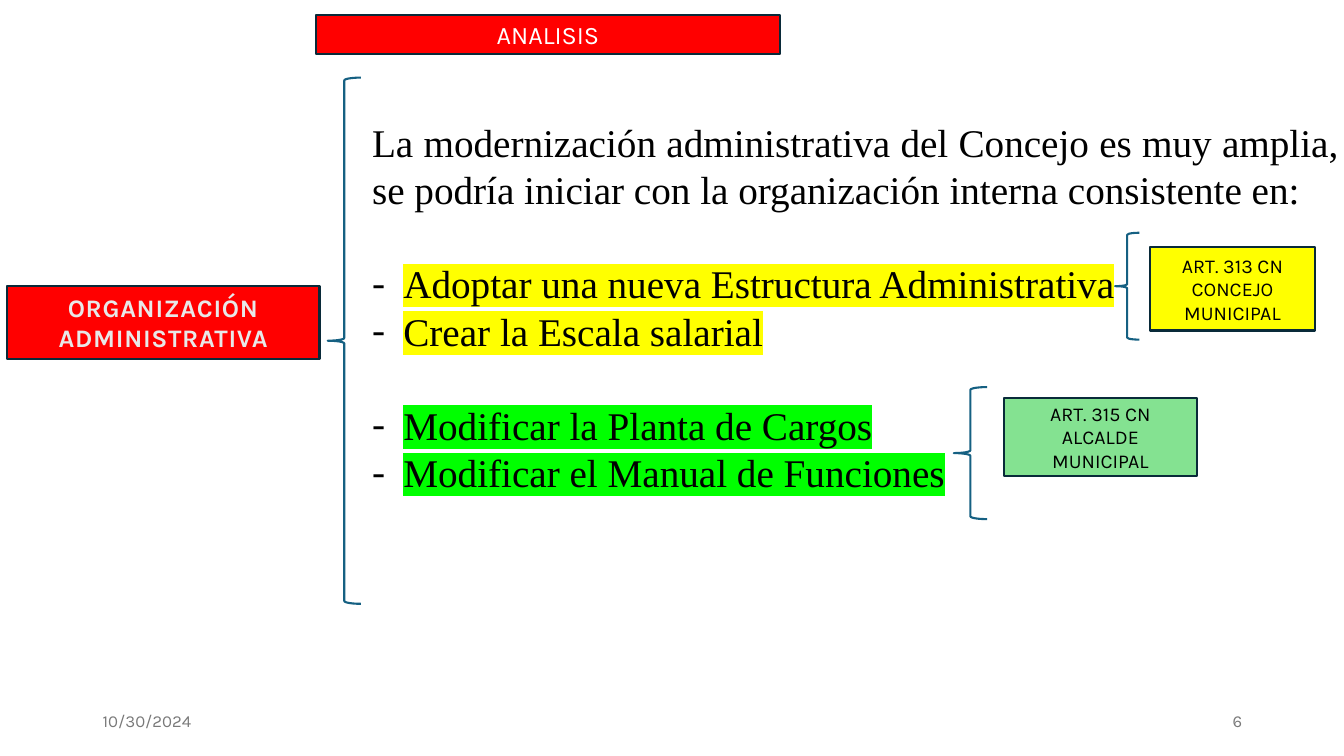
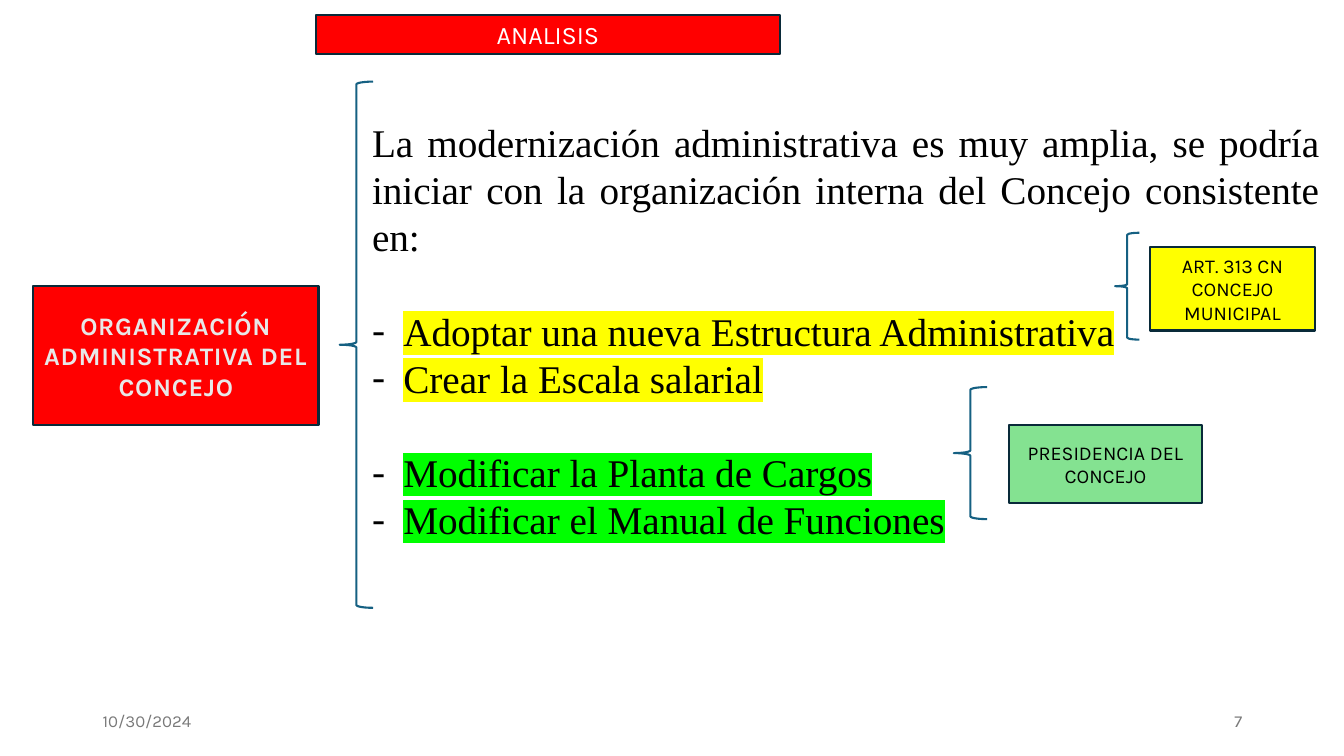
from lxml.etree import SubElement
from pptx import Presentation
from pptx.dml.color import RGBColor
from pptx.enum.shapes import MSO_SHAPE
from pptx.enum.text import MSO_ANCHOR, MSO_AUTO_SIZE, PP_ALIGN
from pptx.oxml.ns import qn
from pptx.util import Inches, Pt

RED = RGBColor(0xFF, 0x00, 0x00)
YELLOW = RGBColor(0xFF, 0xFF, 0x00)
LIME = RGBColor(0x00, 0xFF, 0x00)
MINT = RGBColor(0x84, 0xE2, 0x91)
NAVY = RGBColor(0x09, 0x2A, 0x39)
BLUE = RGBColor(0x15, 0x60, 0x82)
BLACK = RGBColor(0x00, 0x00, 0x00)
WHITE = RGBColor(0xFF, 0xFF, 0xFF)
PALE = RGBColor(0xE8, 0xE8, 0xE8)
GRAY = RGBColor(0x79, 0x79, 0x79)
SANS, SERIF = "Karla", "Times New Roman"
LINE_PITCH = Pt(33.7)
HANGING = Inches(0.31)

TITLE, TITLE_AT = "ANALISIS", (3.13, 0.15, 4.61, 0.39)
DATE, DATE_AT, NUMBER_AT = "10/30/2024", (0.92, 6.95, 3, 0.4), (9.42, 6.95, 3, 0.4)
GROUPS = [
    (YELLOW, ["Adoptar una nueva Estructura Administrativa", "Crear la Escala salarial"]),
    (LIME, ["Modificar la Planta de Cargos", "Modificar el Manual de Funciones"]),
]
GROUP_BRACES = [(11.06, 2.31, 0.24, 1.06), (9.46, 3.84, 0.33, 1.31)]
COUNCIL, COUNCIL_AT = "ART. 313 CN\nCONCEJO MUNICIPAL", (11.41, 2.45, 1.63, 0.83)

SLIDES = [
    {
        "number": 6,
        "topic": ("ORGANIZACIÓN ADMINISTRATIVA", (0.07, 2.84, 3.1, 0.72)),
        "intro": "La modernización administrativa del Concejo es muy amplia, "
                 "se podría iniciar con la organización interna consistente en:",
        "body_at": (3.59, 1.12, 9.79, 4.17),
        "main_brace": (3.25, 0.77, 0.33, 5.22),
        "authority": ("ART. 315 CN\nALCALDE MUNICIPAL", (9.96, 3.95, 1.91, 0.77)),
    },
    {
        "number": 7,
        "topic": ("ORGANIZACIÓN ADMINISTRATIVA DEL CONCEJO", (0.33, 2.84, 2.83, 1.38)),
        "intro": "La modernización administrativa es muy amplia, se podría "
                 "iniciar con la organización interna del Concejo consistente en:",
        "body_at": (3.59, 1.12, 9.6, 4.64),
        "main_brace": (3.37, 0.81, 0.33, 5.22),
        "authority": ("PRESIDENCIA DEL CONCEJO", (10.01, 4.22, 1.91, 0.77)),
    },
]


def place(sp, at):
    sp.left, sp.top, sp.width, sp.height = map(Inches, at)


def style_run(r, font, size, color, bold=False):
    r.font.name, r.font.size, r.font.bold = font, Pt(size), bold
    r.font.color.rgb = color


def set_text(sp, text, size, color, align, bold=False):
    tf = sp.text_frame
    tf.text = text
    tf.word_wrap = True
    tf.auto_size = MSO_AUTO_SIZE.NONE
    tf.vertical_anchor = MSO_ANCHOR.MIDDLE
    for p in tf.paragraphs:
        p.alignment = align
        for r in p.runs:
            style_run(r, SANS, size, color, bold)


def outline(sp, color):
    sp.line.color.rgb = color
    sp.line.width = Pt(1.5)


def format_box(sp, text, fill, size, color, bold=False):
    sp.fill.solid()
    sp.fill.fore_color.rgb = fill
    outline(sp, NAVY)
    set_text(sp, text, size, color, PP_ALIGN.CENTER, bold)


def add_box(slide, text, at, fill, size, color, bold=False):
    sp = slide.shapes.add_shape(MSO_SHAPE.RECTANGLE, *map(Inches, at))
    sp.shadow.inherit = False
    format_box(sp, text, fill, size, color, bold)
    return sp


def add_brace(slide, at):
    sp = slide.shapes.add_shape(MSO_SHAPE.LEFT_BRACE, *map(Inches, at))
    sp.shadow.inherit = False
    sp.fill.background()
    outline(sp, BLUE)


def add_footer(slide, text, at, align):
    sp = slide.shapes.add_textbox(*map(Inches, at))
    set_text(sp, text, 12, GRAY, align)


def format_body_paragraph(p, text, gap=False, highlight=None):
    p.text = text
    p.alignment = PP_ALIGN.JUSTIFY
    p.line_spacing = LINE_PITCH
    p.space_before = LINE_PITCH if gap else Pt(0)
    p.space_after = Pt(0)
    r = p.runs[0]
    style_run(r, SERIF, 28, BLACK)
    pPr = p._p.get_or_add_pPr()
    indent = HANGING if highlight else 0
    pPr.set("marL", str(indent))
    pPr.set("indent", str(-indent))
    if not highlight:
        SubElement(pPr, qn("a:buNone"))
        return
    SubElement(pPr, qn("a:buFont")).set("typeface", SERIF)
    SubElement(pPr, qn("a:buChar")).set("char", "-")
    rPr = r._r.get_or_add_rPr()
    mark = SubElement(rPr, qn("a:highlight"))
    SubElement(mark, qn("a:srgbClr")).set("val", str(highlight))
    rPr.find(qn("a:solidFill")).addnext(mark)


def fill_body(sp, intro):
    tf = sp.text_frame
    tf.word_wrap = True
    tf.auto_size = MSO_AUTO_SIZE.NONE
    tf.vertical_anchor = MSO_ANCHOR.TOP
    format_body_paragraph(tf.paragraphs[0], intro)
    for color, items in GROUPS:
        for i, item in enumerate(items):
            format_body_paragraph(tf.add_paragraph(), item, i == 0, color)


def build_slide(prs, data):
    slide = prs.slides.add_slide(prs.slide_layouts[1])
    title, body = slide.shapes.title, slide.placeholders[1]
    place(title, TITLE_AT)
    format_box(title, TITLE, RED, 18, WHITE)
    place(body, data["body_at"])
    fill_body(body, data["intro"])

    topic = add_box(slide, *data["topic"], RED, 18, PALE, True)
    topic.text_frame.paragraphs[0].runs[0]._r.get_or_add_rPr().set("spc", "50")
    for at in [data["main_brace"], *GROUP_BRACES]:
        add_brace(slide, at)
    add_box(slide, COUNCIL, COUNCIL_AT, YELLOW, 14, BLACK)
    add_box(slide, *data["authority"], MINT, 14, BLACK)
    add_footer(slide, DATE, DATE_AT, PP_ALIGN.LEFT)
    add_footer(slide, str(data["number"]), NUMBER_AT, PP_ALIGN.RIGHT)


def main():
    prs = Presentation()
    prs.slide_width, prs.slide_height = Inches(13.33), Inches(7.5)
    for data in SLIDES:
        build_slide(prs, data)
    prs.save("out.pptx")


if __name__ == "__main__":
    main()
